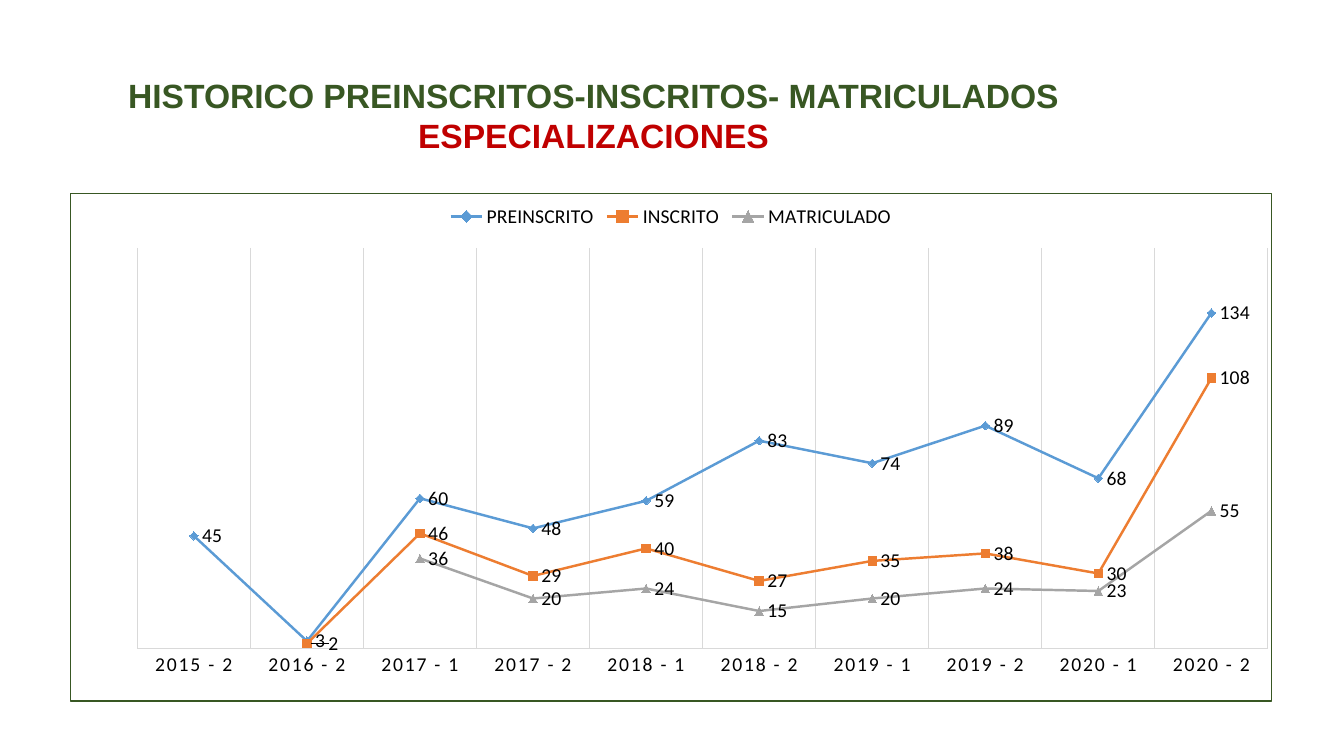
from lxml import etree
from pptx import Presentation
from pptx import util as u
from pptx.chart import data as chart_data
from pptx.dml import color
from pptx.enum import chart as charts
from pptx.enum import text
from pptx.oxml import parse_xml
from pptx.oxml import ns

COLORS = {"green": "385723", "red": "C00000", "black": "000000", "grid": "D9D9D9",
          "blue": "5B9BD5", "orange": "ED7D31", "gray": "A5A5A5"}
TITLE = [("HISTORICO PREINSCRITOS-INSCRITOS- MATRICULADOS", "green"),
         ("ESPECIALIZACIONES", "red")]
PERIODS = ["2015 - 2", "2016 - 2", "2017 - 1", "2017 - 2", "2018 - 1",
           "2018 - 2", "2019 - 1", "2019 - 2", "2020 - 1", "2020 - 2"]
SERIES = [
    ("PREINSCRITO", "blue", "DIAMOND", [45, 3, 60, 48, 59, 83, 74, 89, 68, 134]),
    ("INSCRITO", "orange", "SQUARE", [None, 2, 46, 29, 40, 27, 35, 38, 30, 108]),
    ("MATRICULADO", "gray", "TRIANGLE", [None, None, 36, 20, 24, 15, 20, 24, 23, 55]),
]
SLIDE_SIZE = (960, 540)
TITLE_BOX = (64, 49.7, 720, 65.5)
CHART_BOX = (49.7, 137.5, 859, 363.6)
PLOT_LAYOUT = {"layoutTarget": "inner", "xMode": "edge", "yMode": "edge",
               "x": 0.056, "y": 0.108, "w": 0.941, "h": 0.789}
LABEL_SHIFT = {"x": 0.011, "y": 0}
TITLE_FONT = {"name": "Arial", "size": u.Pt(24), "bold": True}
CHART_FONT = {"name": "Calibri", "size": u.Pt(14), "bold": False}
CATEGORY_AXIS = {"has_major_gridlines": True,
                 "major_tick_mark": charts.XL_TICK_MARK.NONE,
                 "minor_tick_mark": charts.XL_TICK_MARK.NONE}
VALUE_AXIS = {"minimum_scale": 0, "maximum_scale": 160,
              "has_major_gridlines": False, "visible": False}
LEGEND = {"position": charts.XL_LEGEND_POSITION.TOP, "include_in_layout": False}
LABELS = {"show_value": True, "position": charts.XL_LABEL_POSITION.RIGHT}


def rgb(name):
    """Return the named colour."""
    return color.RGBColor.from_string(COLORS[name])


def apply(target, values):
    """Set every attribute in a dict of values."""
    for name, value in values.items():
        setattr(target, name, value)


def style_font(font, values, color_name):
    """Set the typeface and colour of a font."""
    apply(font, values)
    font.color.rgb = rgb(color_name)


def style_line(line, color_name, width):
    """Set the colour and width of a line."""
    line.color.rgb = rgb(color_name)
    line.width = u.Pt(width)


def manual_layout(values):
    """Build a chart layout element."""
    layout = etree.Element(ns.qn("c:layout"))
    manual = etree.SubElement(layout, ns.qn("c:manualLayout"))
    for name, value in values.items():
        etree.SubElement(manual, ns.qn(f"c:{name}")).set("val", str(value))
    return layout


def add_title(slide):
    """Add the two-line title."""
    frame = slide.shapes.add_textbox(*map(u.Pt, TITLE_BOX)).text_frame
    frame.word_wrap = True
    for index, (line, color_name) in enumerate(TITLE):
        paragraph = frame.add_paragraph() if index else frame.paragraphs[0]
        paragraph.alignment = text.PP_ALIGN.CENTER
        run = paragraph.add_run()
        run.text = line
        style_font(run.font, TITLE_FONT, color_name)


def style_series(series, color_name, marker_name):
    """Format one line with its markers and labels."""
    series.smooth = False
    style_line(series.format.line, color_name, 1.75)
    marker = series.marker
    apply(marker, {"style": charts.XL_MARKER_STYLE[marker_name], "size": 6})
    marker.format.fill.solid()
    marker.format.fill.fore_color.rgb = rgb(color_name)
    style_line(marker.format.line, color_name, 0.75)
    apply(series.data_labels, LABELS)
    style_font(series.data_labels.font, CHART_FONT, "black")


def frame_chart(chart):
    """Place the plot area and outline the chart."""
    plot_area = chart.element.xpath("c:chart/c:plotArea")[0]
    for layout in plot_area.findall(ns.qn("c:layout")):
        plot_area.remove(layout)
    plot_area.insert(0, manual_layout(PLOT_LAYOUT))
    border = parse_xml(
        f'<c:spPr {ns.nsdecls("c", "a")}><a:noFill/><a:ln w="{u.Pt(0.75)}"><a:solidFill>'
        f'<a:srgbClr val="{COLORS["green"]}"/></a:solidFill></a:ln></c:spPr>')
    chart.element.xpath("c:chart")[0].addnext(border)


def add_history_chart(slide):
    """Add the enrolment history line chart."""
    history = chart_data.CategoryChartData()
    history.categories = PERIODS
    for name, _, _, values in SERIES:
        history.add_series(name, values)
    chart = slide.shapes.add_chart(charts.XL_CHART_TYPE.LINE_MARKERS,
                                   *map(u.Pt, CHART_BOX), history).chart
    apply(chart, {"has_title": False, "has_legend": True})
    style_font(chart.font, CHART_FONT, "black")
    apply(chart.legend, LEGEND)
    style_font(chart.legend.font, CHART_FONT, "black")
    chart.plots[0].vary_by_categories = False
    apply(chart.value_axis, VALUE_AXIS)
    axis = chart.category_axis
    apply(axis, CATEGORY_AXIS)
    style_font(axis.tick_labels.font, CHART_FONT, "black")
    chart.element.xpath(".//c:catAx//a:defRPr")[0].set("spc", "120")
    for line in (axis.format.line, axis.major_gridlines.format.line):
        style_line(line, "grid", 0.75)
    for series, (_, color_name, marker_name, _) in zip(chart.plots[0].series, SERIES):
        style_series(series, color_name, marker_name)
    label = chart.plots[0].series[1].points[1].data_label
    style_font(label.font, CHART_FONT, "black")
    label.position = LABELS["position"]
    chart.element.xpath(".//c:dLbl/c:idx")[0].addnext(manual_layout(LABEL_SHIFT))
    frame_chart(chart)


def main():
    """Build and save the slide."""
    presentation = Presentation()
    presentation.slide_width, presentation.slide_height = map(u.Pt, SLIDE_SIZE)
    slide = presentation.slides.add_slide(presentation.slide_layouts[6])
    add_title(slide)
    add_history_chart(slide)
    presentation.save("out.pptx")


if __name__ == "__main__":
    main()
